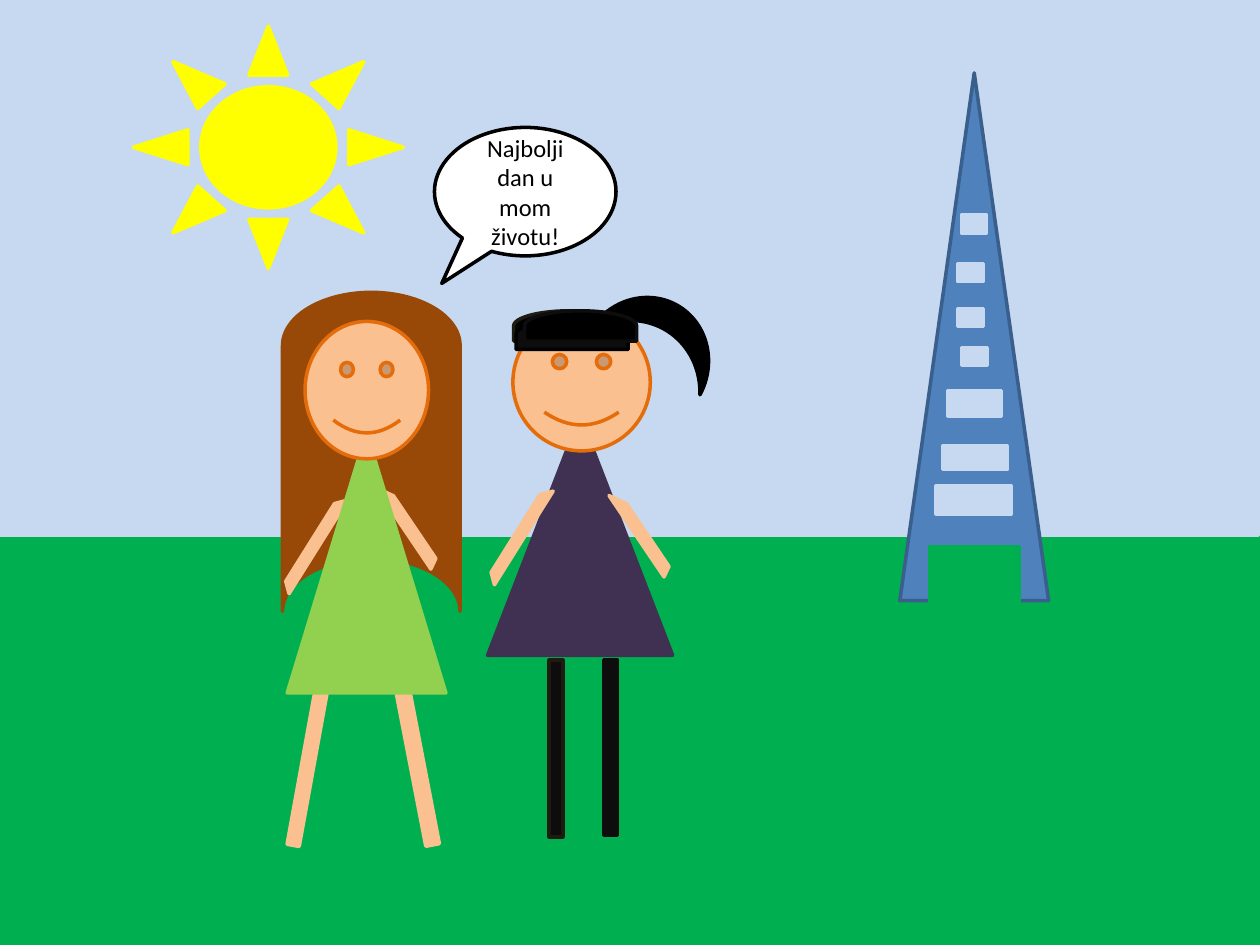
from dataclasses import dataclass
from typing import Optional

from pptx import Presentation
from pptx.dml.color import RGBColor
from pptx.enum.shapes import MSO_SHAPE as Kind
from pptx.enum.text import MSO_ANCHOR, PP_ALIGN
from pptx.oxml.ns import qn
from pptx.util import Cm, Pt

GRASS = RGBColor(0x00, 0xB0, 0x50)
SKY = RGBColor(0xC6, 0xD9, 0xF1)
SKIN = RGBColor(0xFA, 0xC0, 0x90)
FACE_EDGE = RGBColor(0xE4, 0x6C, 0x0A)
BROWN = RGBColor(0x98, 0x48, 0x07)
LIME = RGBColor(0x92, 0xD0, 0x50)
YELLOW = RGBColor(0xFF, 0xFF, 0x00)
STEEL = RGBColor(0x4F, 0x81, 0xBD)
STEEL_EDGE = RGBColor(0x3A, 0x5F, 0x8C)
PLUM = RGBColor(0x40, 0x31, 0x52)
WHITE = RGBColor(0xFF, 0xFF, 0xFF)
BLACK = RGBColor(0x00, 0x00, 0x00)
SOOT = RGBColor(0x0D, 0x0D, 0x0D)
OLIVE_BLACK = RGBColor(0x1E, 0x1C, 0x11)


@dataclass(frozen=True)
class Part:
    """One shape; lengths in centimetres, the edge defaults to the fill."""
    kind: Kind
    left: float
    top: float
    width: float
    height: float
    fill: RGBColor
    edge: Optional[RGBColor] = None
    turn: float = 0
    flip: bool = False
    adjust: tuple[float, ...] = ()


def draw(shapes, part: Part):
    shape = shapes.add_shape(part.kind, Cm(part.left), Cm(part.top),
                             Cm(part.width), Cm(part.height))
    shape.shadow.inherit = False
    shape.fill.solid()
    shape.fill.fore_color.rgb = part.fill
    shape.line.color.rgb = part.edge or part.fill
    shape.line.width = Pt(2)
    shape.rotation = part.turn
    for index, value in enumerate(part.adjust):
        shape.adjustments[index] = value
    if part.flip:
        shape._element.spPr.find(qn("a:xfrm")).set("flipH", "1")
    return shape


def draw_group(page, parts: list[Part]) -> None:
    group = page.shapes.add_group_shape()
    for part in parts:
        draw(group.shapes, part)


def left_arm(left: float, top: float) -> Part:
    return Part(Kind.DIAGONAL_STRIPE, left, top, 1.52, 1.63, SKIN,
                turn=255.1, flip=True, adjust=(0.83,))


def right_arm(left: float, top: float) -> Part:
    return Part(Kind.DIAGONAL_STRIPE, left, top, 1.02, 1.7, SKIN,
                turn=115, adjust=(0.769,))


def face(left: float, top: float, width: float, smile: tuple[float, ...] = ()) -> Part:
    return Part(Kind.SMILEY_FACE, left, top, width, 2.77, SKIN, FACE_EDGE, adjust=smile)


def fringe(left: float, top: float, fill: RGBColor, edge: RGBColor) -> Part:
    return Part(Kind.FLOWCHART_DELAY, left, top, 0.61, 2.26, fill, edge, turn=270)


def window(left: float, top: float, width: float, height: float) -> Part:
    return Part(Kind.RECTANGLE, left, top, width, height, SKY)


LONG_HAIRED_GIRL = [
    Part(Kind.RECTANGLE, 6.07, 13.89, 0.25, 3.18, SKIN, turn=10.3),
    Part(Kind.RECTANGLE, 8.23, 13.39, 0.28, 3.68, SKIN, turn=349.1, flip=True),
    Part(Kind.FLOWCHART_STORED_DATA, 4.27, 7.32, 6.43, 3.58, BROWN, turn=90),
    right_arm(7.62, 9.8),
    left_arm(5.66, 10.21),
    Part(Kind.FLOWCHART_EXTRACT, 5.79, 8.71, 3.2, 5.26, LIME),
    face(6.15, 6.48, 2.49, (0.047,)),
]

TOWER = [
    Part(Kind.FLOWCHART_EXTRACT, 18.14, 1.47, 3, 10.64, STEEL, STEEL_EDGE),
    window(19.38, 4.34, 0.51, 0.36),
    window(19.3, 5.31, 0.53, 0.36),
    window(19.3, 6.22, 0.53, 0.36),
    window(19.38, 7.01, 0.53, 0.36),
    window(19.1, 7.87, 1.09, 0.53),
    window(19, 8.99, 1.3, 0.48),
    window(18.87, 9.8, 1.52, 0.56),
    Part(Kind.RECTANGLE, 18.75, 11.02, 1.8, 1.3, GRASS),
]

PONYTAIL_GIRL = [
    Part(Kind.FLOWCHART_EXTRACT, 9.83, 8.38, 3.73, 4.83, PLUM),
    face(10.34, 6.32, 2.77),
    Part(Kind.RECTANGLE, 11.07, 13.31, 0.28, 3.56, SOOT, OLIVE_BLACK),
    Part(Kind.RECTANGLE, 12.17, 13.31, 0.28, 3.53, SOOT),
    fringe(11.18, 5.44, BLACK, OLIVE_BLACK),
    fringe(11.23, 5.61, SOOT, BLACK),
    Part(Kind.MOON, 12.62, 5.46, 1.37, 2.57, BLACK, turn=118.4, adjust=(0.4,)),
    fringe(11.4, 5.44, BLACK, SOOT),
    left_arm(9.8, 10.03),
    right_arm(12.32, 9.96),
]


def draw_speech(page, text: str) -> None:
    bubble = draw(page.shapes, Part(Kind.OVAL_CALLOUT, 8.76, 2.57, 3.66, 2.59,
                                    WHITE, BLACK, adjust=(-0.46, 0.714)))
    frame = bubble.text_frame
    frame.word_wrap = True
    frame.vertical_anchor = MSO_ANCHOR.MIDDLE
    para = frame.paragraphs[0]
    para.text = text
    para.alignment = PP_ALIGN.CENTER
    para.font.name = "Calibri"
    para.font.size = Pt(14)
    para.font.color.rgb = BLACK


def main() -> None:
    deck = Presentation()
    deck.slide_width, deck.slide_height = Cm(25.4), Cm(19.05)
    page = deck.slides.add_slide(deck.slide_layouts[6])

    # Landscape
    draw(page.shapes, Part(Kind.RECTANGLE, 0, 10.67, 25.4, 8.38, GRASS))
    draw(page.shapes, Part(Kind.RECTANGLE, -0.03, 0, 25.4, 10.8, SKY))

    # Figures, sun and tower, from back to front
    draw_group(page, LONG_HAIRED_GIRL)
    draw(page.shapes, Part(Kind.SUN, 2.69, 0.53, 5.44, 4.88, YELLOW))
    draw_group(page, TOWER)
    draw_speech(page, "Najbolji dan u mom životu!")
    draw_group(page, PONYTAIL_GIRL)

    deck.save("out.pptx")


if __name__ == "__main__":
    main()
